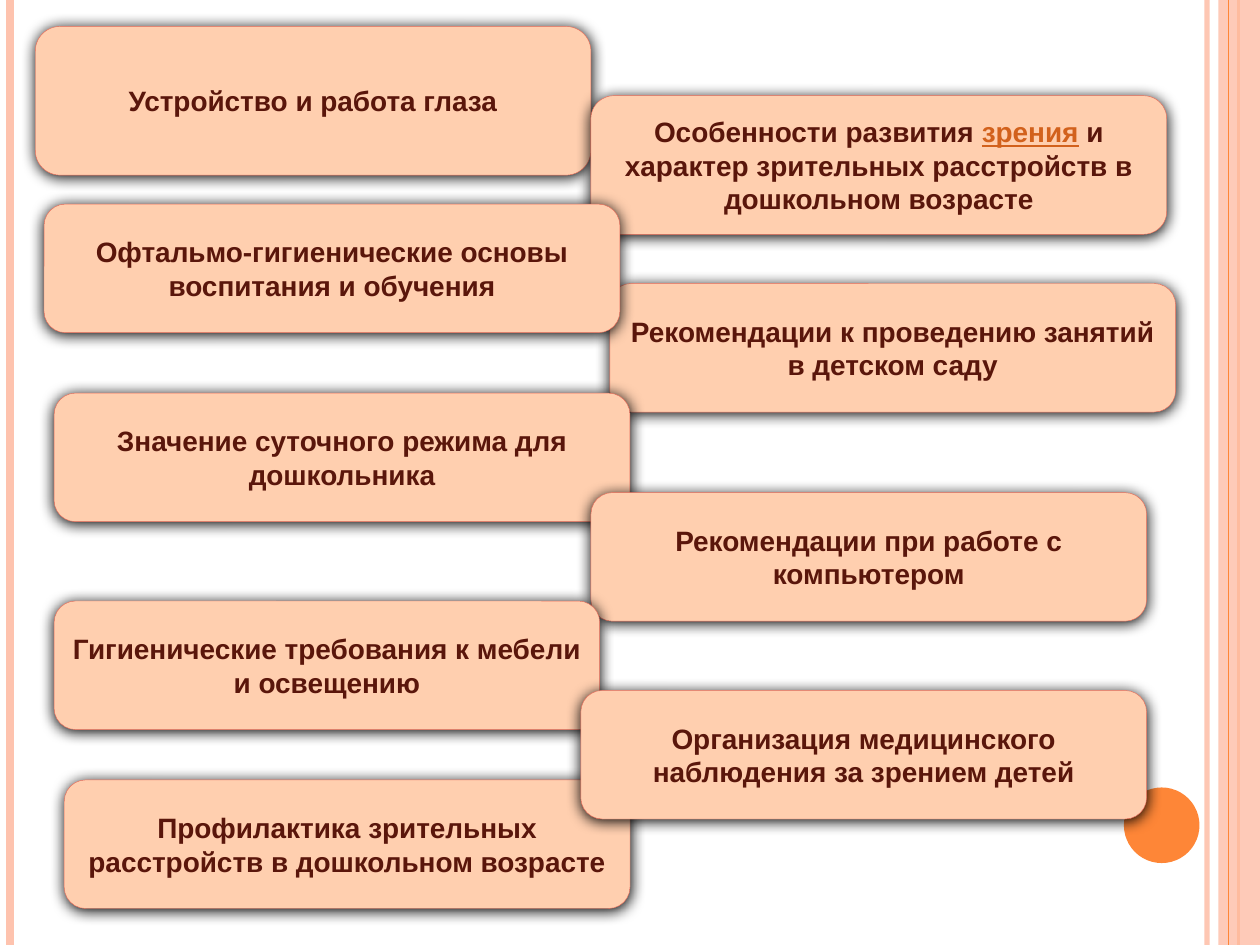
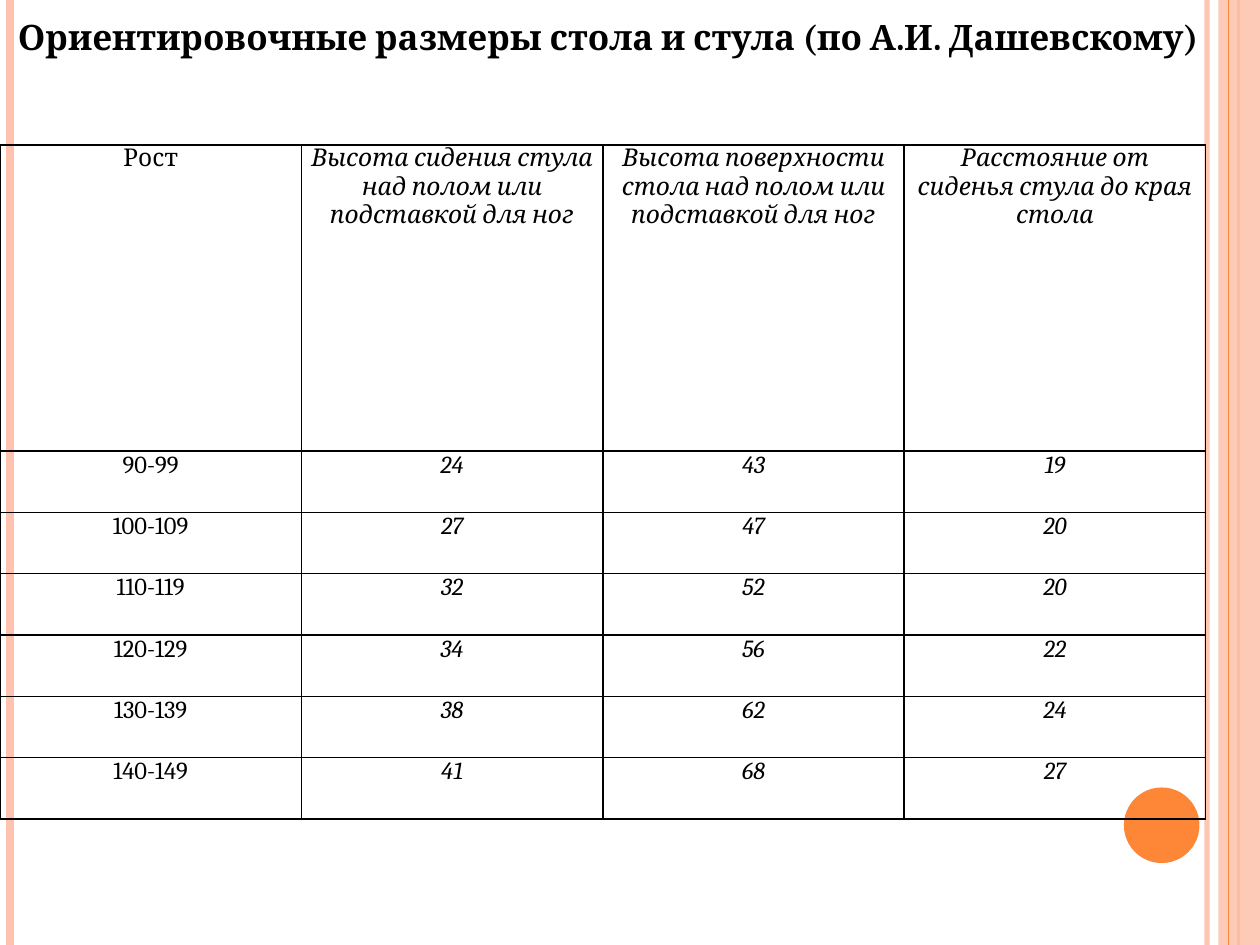
from lxml import etree
from pptx import Presentation
from pptx.dml.color import RGBColor
from pptx.enum.shapes import MSO_CONNECTOR, MSO_SHAPE
from pptx.enum.text import MSO_ANCHOR, PP_ALIGN
from pptx.oxml.ns import qn
from pptx.util import Inches, Pt

STRAIGHT = MSO_CONNECTOR.STRAIGHT
RECT, OVAL = MSO_SHAPE.RECTANGLE, MSO_SHAPE.OVAL
CARD = MSO_SHAPE.FLOWCHART_ALTERNATE_PROCESS
TOP, MIDDLE = MSO_ANCHOR.TOP, MSO_ANCHOR.MIDDLE
CENTER = PP_ALIGN.CENTER

COLS, ROWS = 100, 75
CELL = Inches(0.1)
PINK, ORANGE, PEACH, CORAL = "FEC3AE", "FE8637", "FFCFAF", "EB6E5A"
BROWN, LINK, BLACK = "5A160B", "D2611C", "000000"


def grid(*cells):
    return [round(c * CELL) for c in cells]


def rgb(color):
    return RGBColor.from_string(color)


def sub(parent, tag, **attrs):
    return etree.SubElement(parent, qn(tag), {k: str(v) for k, v in attrs.items()})


def set_alpha(fill_parent, percent):
    color = fill_parent.find(".//" + qn("a:srgbClr"))
    sub(color, "a:alpha", val=percent * 1000)


def write(tf, text, font="Arial", size=16, color=BLACK, bold=False, italic=False,
          anchor=MIDDLE, link=None):
    """Fill a text frame with one centred paragraph; the word `link` is underlined."""
    tf.word_wrap = True
    tf.vertical_anchor = anchor
    p = tf.paragraphs[0]
    p.alignment = CENTER
    before, found, after = text.partition(link) if link else (text, "", "")
    for part in filter(None, (before, found, after)):
        r = p.add_run()
        r.text = part
        f = r.font
        f.name, f.size, f.bold, f.italic = font, Pt(size), bold, italic
        f.underline = part == link
        f.color.rgb = rgb(LINK if part == link else color)


class Deck:
    def __init__(self):
        self.prs = Presentation()
        self.prs.slide_width, self.prs.slide_height = grid(COLS, ROWS)
        self.s = None

    def add_slide(self):
        """Start a slide with the shared side bands and the circle."""
        self.s = self.prs.slides.add_slide(self.prs.slide_layouts[6])
        self.vertical(95.8, PINK, 3, alpha=93)
        self.vertical(0.8, PINK, 4.5)
        self.vertical(98.3, ORANGE, 1.5)
        self.shape(RECT, 96.7, 0, 3.3, ROWS, PINK, alpha=87)
        self.vertical(97.5, ORANGE, 0.75)
        self.shape(OVAL, 89.2, 62.5, 6, 6, ORANGE)

    def vertical(self, x, color, width, alpha=100):
        c = self.s.shapes.add_connector(STRAIGHT, *grid(x, 0, x, ROWS))
        c.line.color.rgb = rgb(color)
        c.line.width = Pt(width)
        if alpha < 100:
            set_alpha(c.line._get_or_add_ln(), alpha)
        sub(c._element.spPr, "a:effectLst")

    def shape(self, kind, x, y, w, h, fill, alpha=100):
        sp = self.s.shapes.add_shape(kind, *grid(x, y, w, h))
        sp.shadow.inherit = False
        sp.fill.solid()
        sp.fill.fore_color.rgb = rgb(fill)
        if alpha < 100:
            set_alpha(sp._element.spPr, alpha)
        sp.line.fill.background()
        return sp

    def card(self, x, y, w, h, text, link=None):
        sp = self.shape(CARD, x, y, w, h, PEACH)
        sp.line.color.rgb = rgb(CORAL)
        sp.line.width = Pt(0.25)
        effects = sp._element.spPr.find(qn("a:effectLst"))
        shadow = sub(effects, "a:outerShdw", blurRad=Pt(8.5), dist=Pt(1),
                     dir=90 * 60000, rotWithShape=0)
        sub(shadow, "a:srgbClr", val=BLACK)
        write(sp.text_frame, text, color=BROWN, bold=True, link=link)

    def title(self, text):
        tb = self.s.shapes.add_textbox(*grid(0, 0.7, 96.5, 9.1))
        write(tb.text_frame, text, font="Cambria", size=20, bold=True, anchor=TOP)

    def table(self, x, y, w, head_h, row_h, rows):
        h = head_h + row_h * (len(rows) - 1)
        frame = self.s.shapes.add_table(len(rows), len(rows[0]), *grid(x, y, w, h))
        t = frame.table
        t.first_row = t.horz_banding = False
        for col in t.columns:
            col.width = grid(w / len(rows[0]))[0]
        for i, values in enumerate(rows):
            t.rows[i].height = grid(row_h if i else head_h)[0]
            for j, value in enumerate(values):
                self.cell(t.cell(i, j), value, italic=j > 0)

    def cell(self, cell, text, italic):
        cell.margin_left = cell.margin_right = Inches(0.07)
        cell.margin_top = cell.margin_bottom = 0
        write(cell.text_frame, text, font="Cambria", size=14, italic=italic)
        cell.vertical_anchor = TOP
        tc_pr = cell._tc.get_or_add_tcPr()
        for side in ("a:lnL", "a:lnR", "a:lnT", "a:lnB"):
            ln = sub(tc_pr, side, w=Pt(1))
            sub(sub(ln, "a:solidFill"), "a:srgbClr", val=BLACK)
        cell.fill.background()


TOPICS = [
    (2.8, 2.1, 44.1, 11.8, "Устройство и работа глаза"),
    (46.9, 7.6, 45.7, 11, "Особенности развития зрения и характер зрительных "
                          "расстройств в дошкольном возрасте", "зрения"),
    (5.1, 61.9, 44.9, 10.2, "Профилактика зрительных расстройств в дошкольном возрасте"),
    (48.4, 22.5, 44.9, 10.2, "Рекомендации к проведению занятий в детском саду"),
    (4.3, 31.2, 45.7, 10.2, "Значение суточного режима для дошкольника"),
    (46.9, 39.1, 44.1, 10.2, "Рекомендации при работе с компьютером"),
    (4.3, 47.7, 43.3, 10.2, "Гигиенические требования к мебели и освещению"),
    (46.1, 54.8, 44.9, 10.2, "Организация медицинского наблюдения за зрением детей"),
    (3.5, 16.2, 45.7, 10.2, "Офтальмо-гигиенические основы воспитания и обучения"),
]

FURNITURE_SIZES = [
    ("Рост", "Высота сидения стула над полом или подставкой для ног",
     "Высота поверхности стола над полом или подставкой для ног",
     "Расстояние от сиденья стула до края стола"),
    ("90-99", "24", "43", "19"),
    ("100-109", "27", "47", "20"),
    ("110-119", "32", "52", "20"),
    ("120-129", "34", "56", "22"),
    ("130-139", "38", "62", "24"),
    ("140-149", "41", "68", "27"),
]


def main():
    deck = Deck()
    deck.add_slide()
    for topic in TOPICS:
        deck.card(*topic)

    deck.add_slide()
    deck.table(0, 11.5, 95.7, 24.3, 4.87, FURNITURE_SIZES)
    deck.title("Ориентировочные размеры стола и стула (по А.И. Дашевскому)")
    deck.prs.save("out.pptx")


if __name__ == "__main__":
    main()
